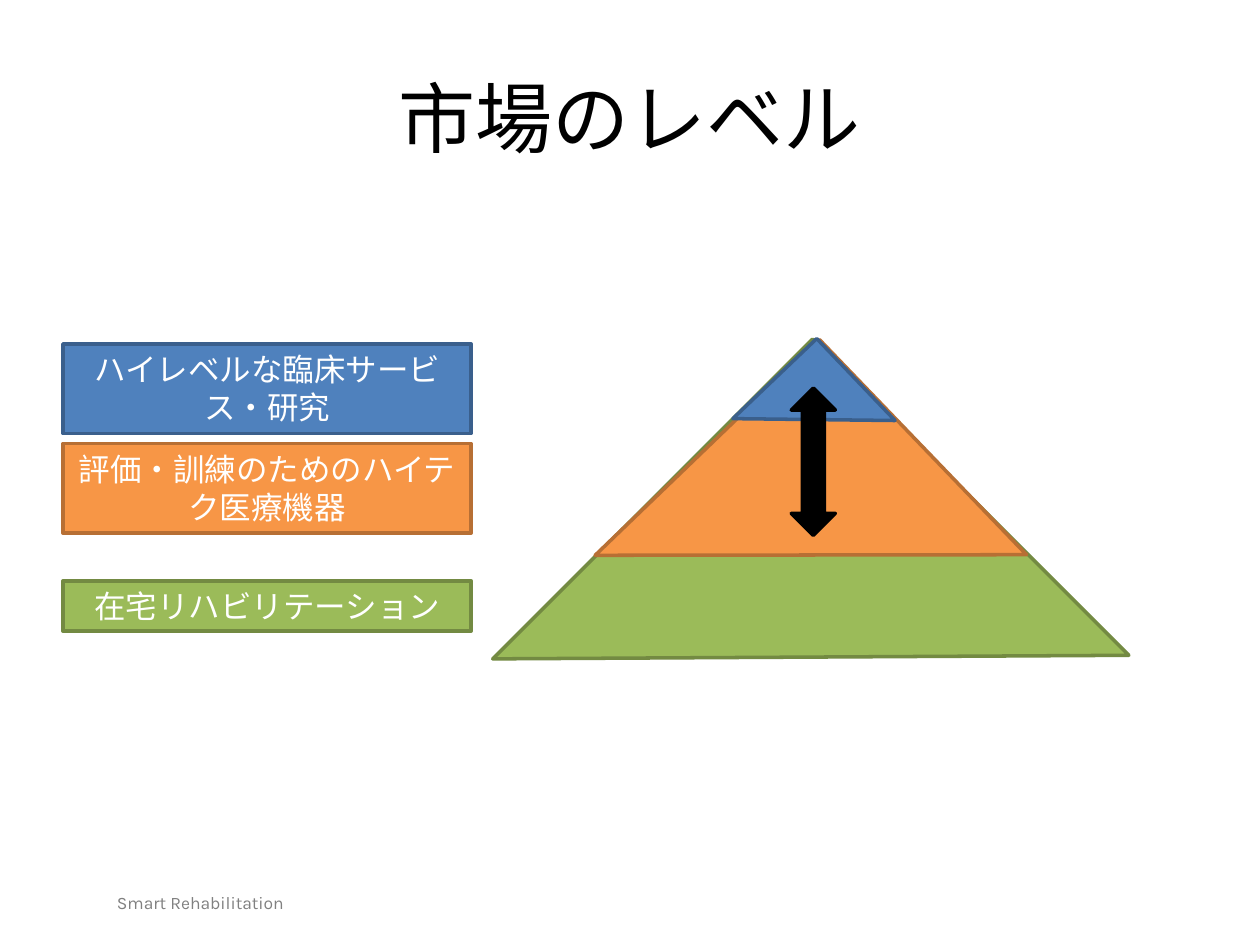
from pptx import Presentation
from pptx.dml.color import RGBColor
from pptx.enum.shapes import MSO_SHAPE as SHAPE
from pptx.enum.text import MSO_ANCHOR as ANCHOR, PP_ALIGN as ALIGN
from pptx.util import Pt

PX = 9144  # EMU per px, 100 px to the inch

BLACK = RGBColor(0x00, 0x00, 0x00)
WHITE = RGBColor(0xFF, 0xFF, 0xFF)
GRAY = RGBColor(0x80, 0x80, 0x80)
BLUE = RGBColor(0x4F, 0x81, 0xBD)
DARK_BLUE = RGBColor(0x3A, 0x5F, 0x8C)
ORANGE = RGBColor(0xF7, 0x96, 0x46)
DARK_ORANGE = RGBColor(0xB7, 0x6F, 0x34)
GREEN = RGBColor(0x9B, 0xBB, 0x59)
DARK_GREEN = RGBColor(0x73, 0x8A, 0x42)


class SlideBuilder:
    font = "Calibri"
    line_width = Pt(2)

    def __init__(self, slide):
        self.shapes = slide.shapes

    def set_text(self, sp, text, size, color, align, anchor, font=None):
        tf = sp.text_frame
        tf.word_wrap = True
        tf.vertical_anchor = anchor
        tf.text = text
        p = tf.paragraphs[0]
        p.alignment = align
        f = p.runs[0].font
        f.name = font or self.font
        f.size = Pt(size)
        f.color.rgb = color

    def text(self, box, text, size, color, align=ALIGN.LEFT,
             anchor=ANCHOR.TOP, font=None):
        sp = self.shapes.add_textbox(*(v * PX for v in box))
        self.set_text(sp, text, size, color, align, anchor, font)

    def shape(self, kind, box, fill, line, rotation=0):
        sp = self.shapes.add_shape(kind, *(v * PX for v in box))
        sp.shadow.inherit = False
        sp.fill.solid()
        sp.fill.fore_color.rgb = fill
        sp.line.color.rgb = line
        sp.line.width = self.line_width
        sp.rotation = rotation
        return sp

    def label(self, top, height, text, fill, line):
        sp = self.shape(SHAPE.RECTANGLE, (50, top, 324, height), fill, line)
        self.set_text(sp, text, 18, WHITE, ALIGN.CENTER, ANCHOR.TOP)


def main():
    prs = Presentation()
    prs.slide_width, prs.slide_height = 1000 * PX, 750 * PX
    s = SlideBuilder(prs.slides.add_slide(prs.slide_layouts[6]))

    # Footer and title
    s.text((83, 703, 285, 27), "Smart Rehabilitation", 10, GRAY, font="Karla")
    s.text((50, 30, 900, 125), "市場のレベル", 44, BLACK, ALIGN.CENTER, ANCHOR.MIDDLE)

    # Level labels
    s.label(273, 71, "ハイレベルな臨床サービス・研究", BLUE, DARK_BLUE)
    s.label(352, 71, "評価・訓練のためのハイテク医療機器", ORANGE, DARK_ORANGE)
    s.label(461, 40, "在宅リハビリテーション", GREEN, DARK_GREEN)

    # Pyramid: right triangles turned corner up, largest at the back
    for box, fill, line, rotation in (
        ((464, 344, 359, 355), GREEN, DARK_GREEN, 135),
        ((520, 322, 247, 237), ORANGE, DARK_ORANGE, 136.1),
        ((600, 288, 92, 90), BLUE, DARK_BLUE, 136.3),
    ):
        s.shape(SHAPE.RIGHT_TRIANGLE, box, fill, line, rotation)

    # Arrow between the two upper levels
    arrow = s.shape(SHAPE.UP_DOWN_ARROW, (628, 308, 35, 117), BLACK, BLACK)
    arrow.adjustments[0] = 0.44
    arrow.adjustments[1] = 0.5

    prs.save("out.pptx")


if __name__ == "__main__":
    main()
